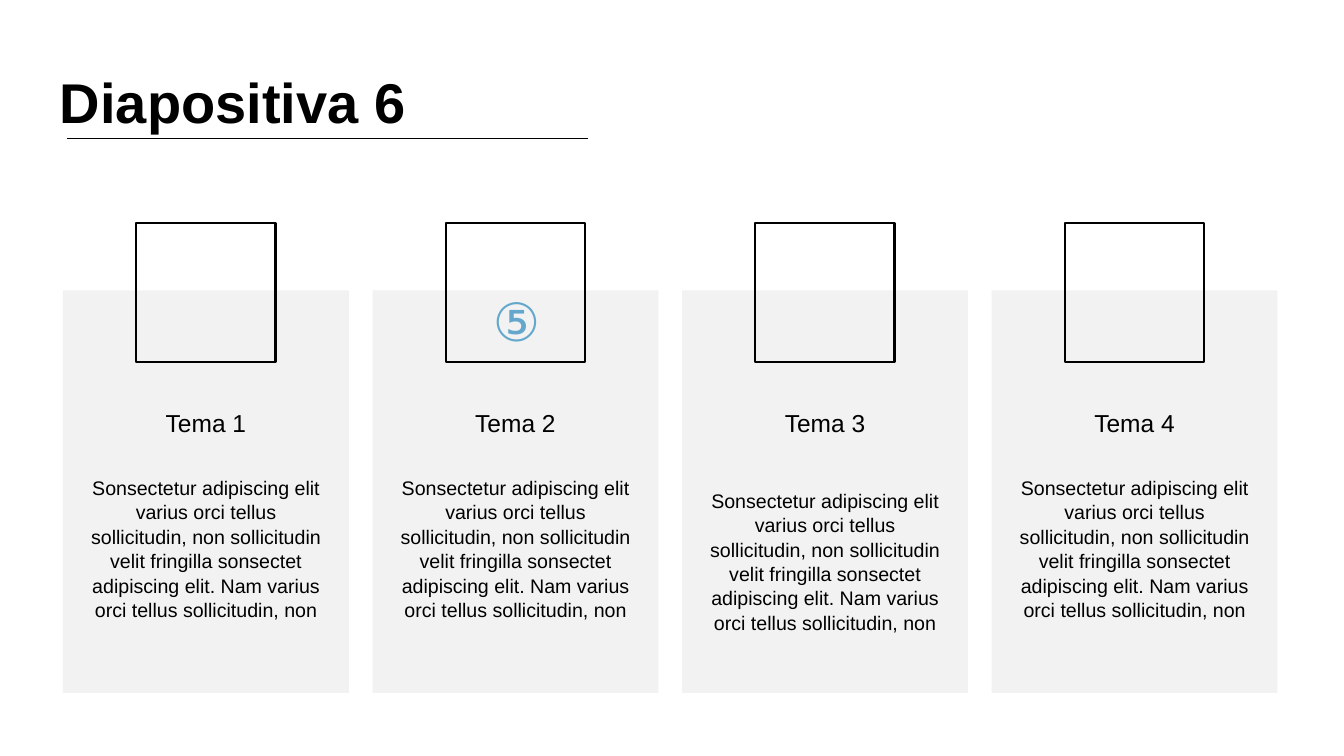
from pptx import Presentation
from pptx.dml.color import RGBColor
from pptx.enum.shapes import MSO_CONNECTOR, MSO_SHAPE
from pptx.enum.text import PP_ALIGN
from pptx.oxml.ns import qn
from pptx.util import Inches, Pt
from lxml import etree

RECTANGLE = MSO_SHAPE.RECTANGLE
STRAIGHT = MSO_CONNECTOR.STRAIGHT
CENTER = PP_ALIGN.CENTER

FONT = "Arial"
BLACK, PANEL_GREY, BLUE = "000000", "F2F2F2", "63A8CC"
BLANK_LAYOUT = 6

BODY = ("Sonsectetur adipiscing elit varius orci tellus sollicitudin, "
        "non sollicitudin velit fringilla sonsectet adipiscing elit. "
        "Nam varius orci tellus sollicitudin, non")

# Each card: heading and the gap in points between heading and body
CARDS = [("Tema 1", 54), ("Tema 2", 54), ("Tema 3", 72), ("Tema 4", 54)]
FIRST_LEFT, CARD_PITCH, CARD_WIDTH = 1.25, 6.14, 5.67
FRAME_SIZE, TEXT_WIDTH = 2.76, 4.83


def color(hex_string):
    return RGBColor.from_string(hex_string)


def add_rectangle(page, left, top, width, height, fill=None, line=None):
    box = page.shapes.add_shape(RECTANGLE, Inches(left), Inches(top),
                                Inches(width), Inches(height))
    box.shadow.inherit = False
    if fill:
        box.fill.solid()
        box.fill.fore_color.rgb = color(fill)
    else:
        box.fill.background()
    if line:
        box.line.color.rgb = color(line)
        box.line.width = Pt(3)
    else:
        box.line.fill.background()


def add_rule(page, left, right, y):
    rule = page.shapes.add_connector(STRAIGHT, Inches(left), Inches(y),
                                     Inches(right), Inches(y))
    rule.line.color.rgb = color(BLACK)
    rule.line.width = Pt(0.5)
    etree.SubElement(rule._element.spPr, qn("a:effectLst"))


def add_text_frame(page, left, top, width, height):
    box = page.shapes.add_textbox(Inches(left), Inches(top),
                                  Inches(width), Inches(height))
    box.text_frame.word_wrap = True
    return box.text_frame


def write(para, text, size, hex_string=BLACK, align=None, spacing=None):
    span = para.add_run()
    span.text = text
    para.font.name = FONT
    para.font.size = Pt(size)
    para.font.color.rgb = color(hex_string)
    para.alignment = align
    para.line_spacing = spacing
    return span


def add_title(page):
    frame = add_text_frame(page, 1.16, 1.5, 10.25, 1.22)
    frame.margin_left = Inches(0.03)
    para = frame.paragraphs[0]
    write(para, "Diapositiva 6", 80, spacing=0.84)
    para.font.bold = True
    add_rule(page, 1.33, 11.66, 2.75)


def add_card(page, left, heading, gap):
    center = left + CARD_WIDTH / 2
    add_rectangle(page, left, 5.76, CARD_WIDTH, 7.99, fill=PANEL_GREY)
    add_rectangle(page, center - FRAME_SIZE / 2, 4.42,
                  FRAME_SIZE, FRAME_SIZE, line=BLACK)
    frame = add_text_frame(page, center - TEXT_WIDTH / 2, 7.71,
                           TEXT_WIDTH, 4.57)
    write(frame.paragraphs[0], heading, 35, align=CENTER, spacing=1.57)
    body = frame.add_paragraph()
    write(body, BODY, 28, align=CENTER, spacing=1.04)
    body.space_before = Pt(gap)


def add_number(page):
    frame = add_text_frame(page, 8.99, 5.47, 2.51, 1.56)
    span = write(frame.paragraphs[0], "⑤", 130, BLUE, CENTER)
    # Superscript, raised by 30 percent
    span._r.get_or_add_rPr().set("baseline", "30000")


def main():
    deck = Presentation()
    deck.slide_width, deck.slide_height = Inches(26.66), Inches(15)
    page = deck.slides.add_slide(deck.slide_layouts[BLANK_LAYOUT])

    # Title with rule
    add_title(page)

    # Four equally spaced topic cards
    for index, (heading, gap) in enumerate(CARDS):
        add_card(page, FIRST_LEFT + index * CARD_PITCH, heading, gap)

    # Number in the second card's frame
    add_number(page)

    deck.save("out.pptx")


if __name__ == "__main__":
    main()
